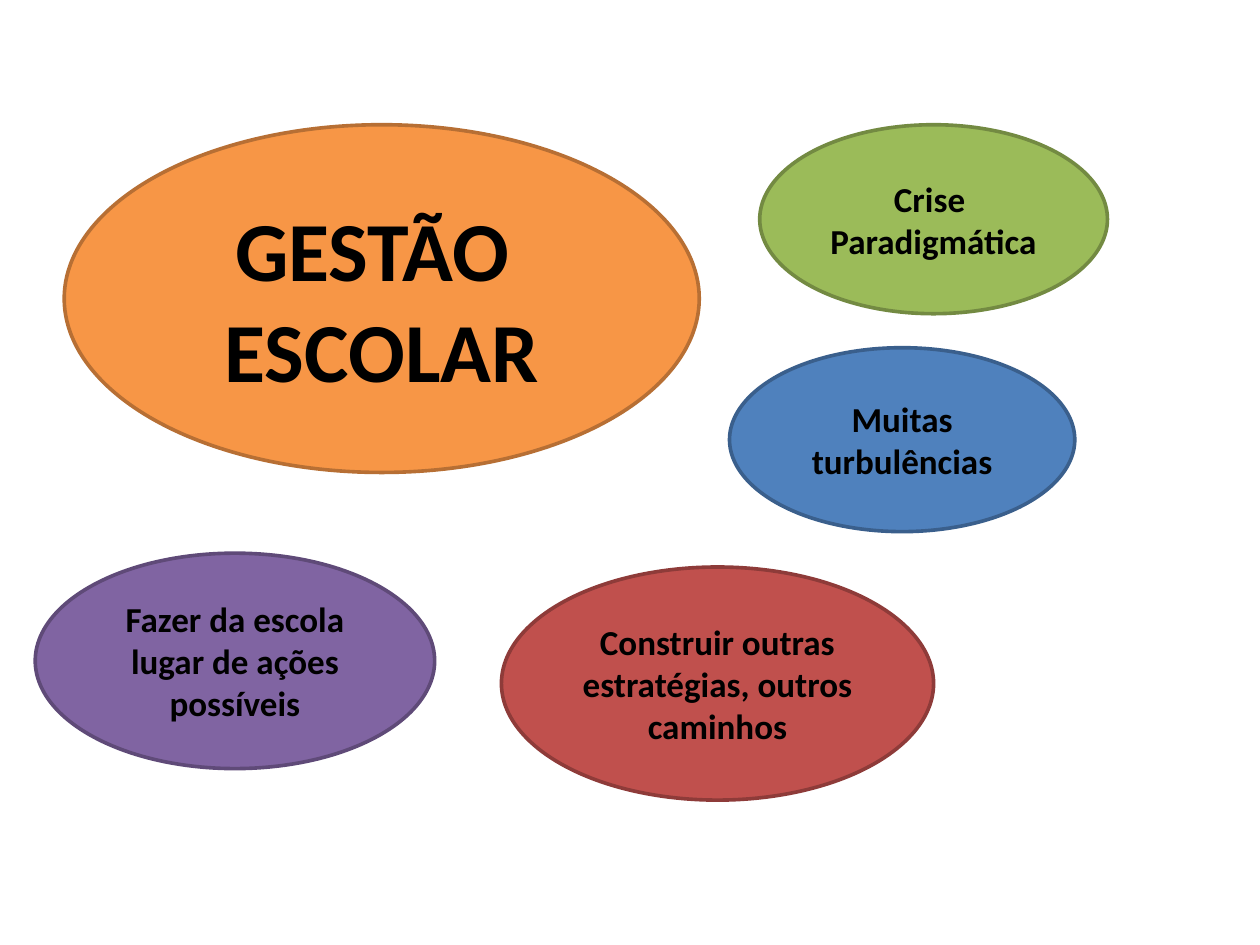
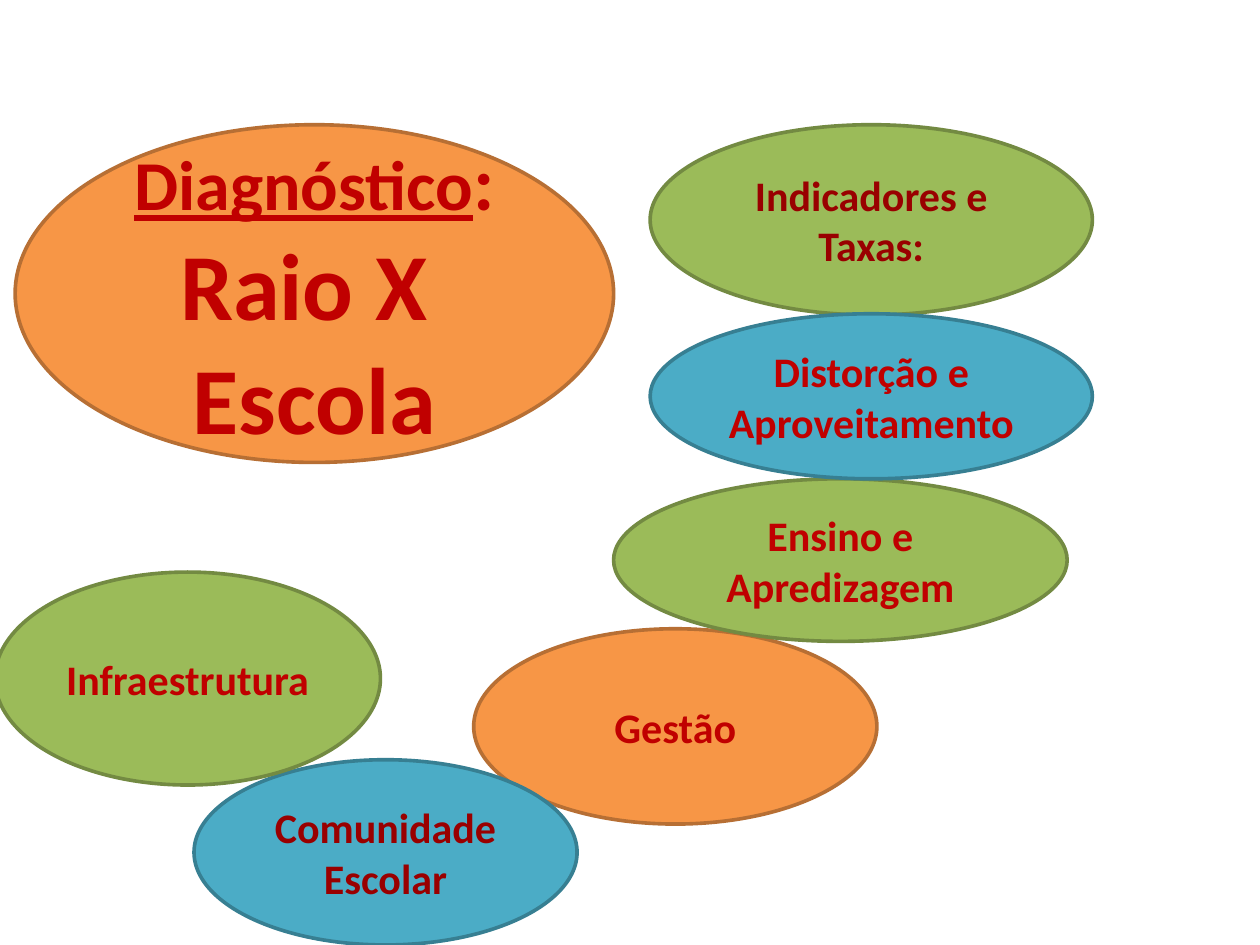
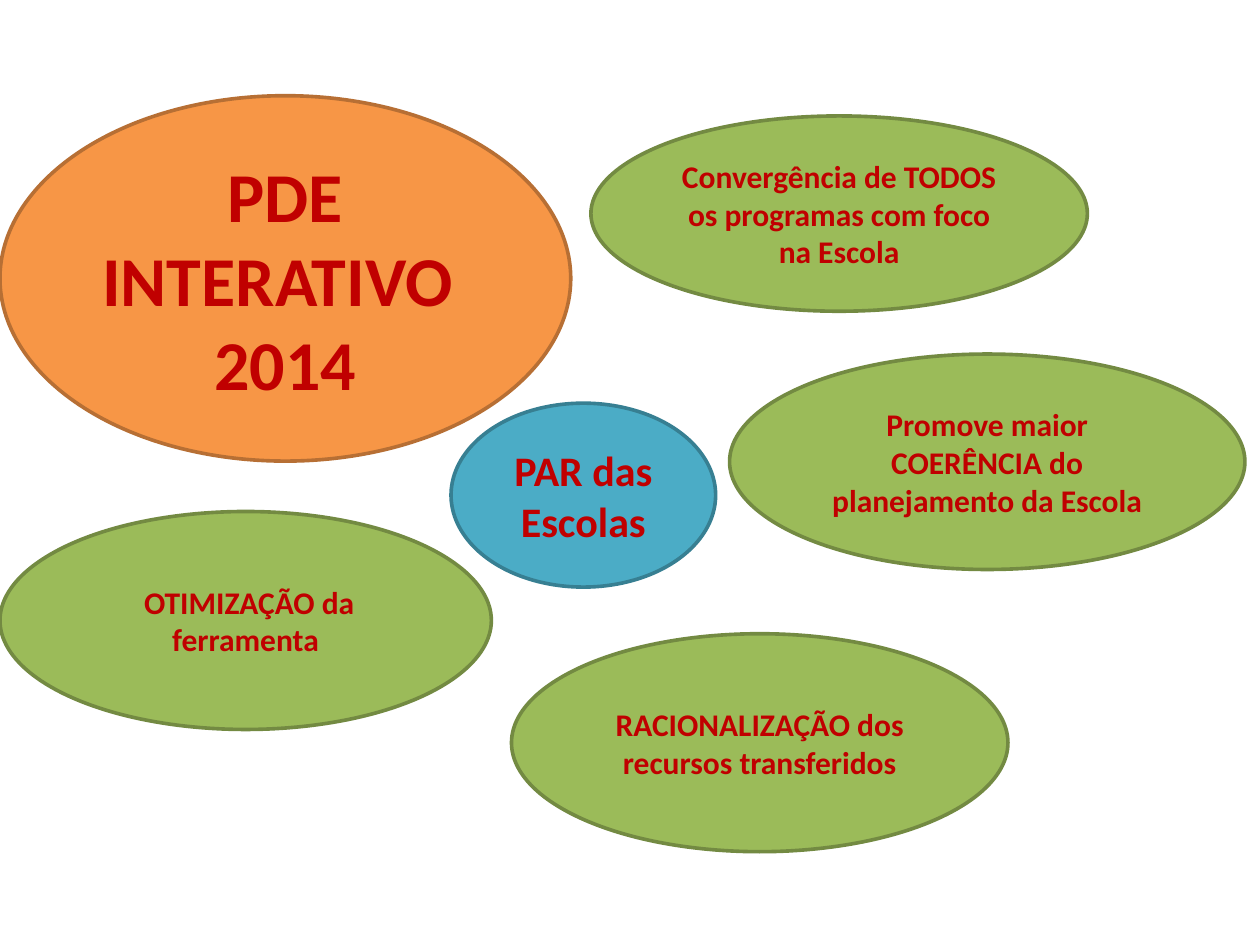
import pptx
import pptx.util
import pptx.dml.color
import pptx.enum.shapes
import pptx.enum.text

Inches, Pt = pptx.util.Inches, pptx.util.Pt

FONT = "Calibri"
OUTLINE_WIDTH = 2.08
COLORS = {
    "black": "000000", "red": "C00000", "dark red": "990000",
    "orange": "F79646", "orange outline": "B76F34",
    "green": "9BBB59", "green outline": "738A42",
    "blue": "4F81BD", "blue outline": "3A5F8C",
    "purple": "8064A2", "purple outline": "5F4A78",
    "brick": "C0504D", "brick outline": "8E3B39",
    "teal": "4BACC6", "teal outline": "377F92",
}

# A paragraph is a string, or a list of (text, format) runs.
DIAGNOSIS = [
    [("Diagnóstico", {"size": 40, "underline": True}), (":", {"size": 44})],
    "Raio X ",
    "Escola",
]

# Each slide: default text format, then ellipses from back to front as
# (paragraphs, fill, (left, top, width, height), format changes).
SLIDES = [
    ({"size": 20, "color": "black"}, [
        (["GESTÃO ", "ESCOLAR"], "orange", (0.51, 0.99, 5.04, 2.76), {"size": 48}),
        (["Crise ", "Paradigmática"], "green", (6.03, 0.99, 2.76, 1.5), {}),
        (["Muitas turbulências"], "blue", (5.79, 2.76, 2.74, 1.46), {}),
        (["Fazer da escola lugar de ações possíveis"], "purple",
         (0.28, 4.39, 3.17, 1.71), {}),
        (["Construir outras estratégias, outros caminhos"], "brick",
         (3.98, 4.5, 3.43, 1.85), {}),
    ]),
    ({"size": 24, "color": "red"}, [
        (DIAGNOSIS, "orange", (0.12, 0.99, 4.75, 2.68), {"size": 54}),
        (["Gestão"], "orange", (3.76, 4.99, 3.2, 1.55), {}),
        (["Indicadores e Taxas:"], "green", (5.16, 0.99, 3.51, 1.51),
         {"color": "dark red"}),
        (["Comunidade Escolar"], "teal", (1.54, 6.03, 3.04, 1.47),
         {"color": "dark red"}),
        (["Ensino e Apredizagem"], "green", (4.87, 3.8, 3.6, 1.29), {}),
        (["Distorção e Aproveitamento"], "teal", (5.16, 2.49, 3.51, 1.31), {}),
        (["Infraestrutura"], "green", (-0.04, 4.54, 3.06, 1.69), {}),
    ]),
    ({"size": 18, "color": "red"}, [
        (["PDE INTERATIVO ", "2014"], "orange", (0, 0.76, 4.53, 2.9), {"size": 40}),
        (["Convergência de TODOS os programas com foco na Escola"], "green",
         (4.69, 0.92, 3.94, 1.55), {}),
        (["Promove maior COERÊNCIA do planejamento da Escola"], "green",
         (5.79, 2.81, 4.09, 1.71), {}),
        (["RACIONALIZAÇÃO dos recursos transferidos"], "green",
         (4.06, 5.03, 3.94, 1.73), {}),
        ([" OTIMIZAÇÃO da ferramenta"], "green", (0, 4.06, 3.9, 1.73), {}),
        (["PAR das Escolas"], "teal", (3.58, 3.2, 2.1, 1.46), {"size": 24}),
    ]),
]


def rgb(name):
    return pptx.dml.color.RGBColor.from_string(COLORS[name])


def add_run(paragraph, text, *, size, color, underline=False):
    run = paragraph.add_run()
    run.text = text
    font = run.font
    font.name, font.size, font.bold = FONT, Pt(size), True
    font.color.rgb = rgb(color)
    if underline:
        font.underline = True


def add_ellipse(slide, paragraphs, fill, box, text_format):
    ellipse = slide.shapes.add_shape(
        pptx.enum.shapes.MSO_SHAPE.OVAL, *map(Inches, box))
    ellipse.shadow.inherit = False
    ellipse.fill.solid()
    ellipse.fill.fore_color.rgb = rgb(fill)
    ellipse.line.color.rgb = rgb(fill + " outline")
    ellipse.line.width = Pt(OUTLINE_WIDTH)

    frame = ellipse.text_frame
    frame.word_wrap = True
    frame.vertical_anchor = pptx.enum.text.MSO_ANCHOR.MIDDLE
    for index, content in enumerate(paragraphs):
        paragraph = frame.add_paragraph() if index else frame.paragraphs[0]
        paragraph.alignment = pptx.enum.text.PP_ALIGN.CENTER
        runs = [(content, {})] if isinstance(content, str) else content
        for text, changes in runs:
            add_run(paragraph, text, **{**text_format, **changes})


def main():
    deck = pptx.Presentation()
    deck.slide_width, deck.slide_height = Inches(10), Inches(7.5)
    blank = deck.slide_layouts[6]
    for defaults, ellipses in SLIDES:
        slide = deck.slides.add_slide(blank)
        for paragraphs, fill, box, changes in ellipses:
            add_ellipse(slide, paragraphs, fill, box, {**defaults, **changes})
    deck.save("out.pptx")


if __name__ == "__main__":
    main()
